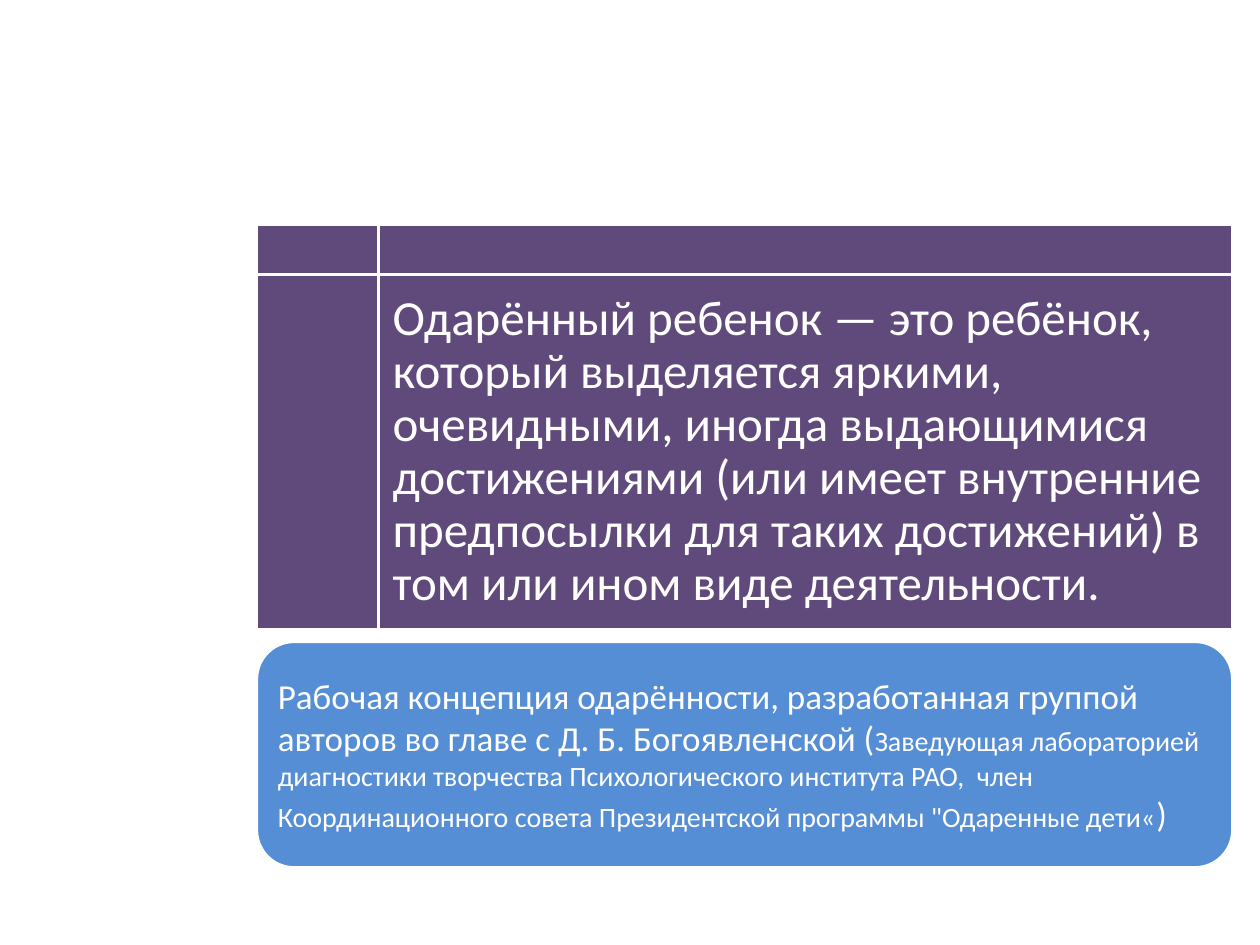
from pptx import Presentation
from pptx.dml.color import RGBColor as Color
from pptx.enum.shapes import MSO_SHAPE as Preset
from pptx.enum.text import MSO_ANCHOR as Anchor, PP_ALIGN as Align
from pptx.util import Pt

COLORS = {"definition": "604A7B", "concept": "558ED5", "white": "FFFFFF"}


class SlideBuilder:
    """Holds the text style and the current slide, and adds elements to it."""

    font_name = "Calibri"

    def __init__(self, slide):
        self.slide = slide

    def panel(self, preset, left, top, width, height, color):
        shape = self.slide.shapes.add_shape(
            preset, Pt(left), Pt(top), Pt(width), Pt(height))
        shape.shadow.inherit = False
        shape.fill.solid()
        shape.fill.fore_color.rgb = Color.from_string(COLORS[color])
        shape.line.color.rgb = Color.from_string(COLORS["white"])
        shape.line.width = Pt(2)

    def text(self, left, top, width, height, runs, inset, spacing=1.0):
        box = self.slide.shapes.add_textbox(
            Pt(left), Pt(top), Pt(width), Pt(height))
        frame = box.text_frame
        frame.word_wrap = True
        frame.vertical_anchor = Anchor.MIDDLE
        frame.margin_left = frame.margin_right = Pt(inset)
        frame.margin_top = frame.margin_bottom = Pt(inset)
        paragraph = frame.paragraphs[0]
        paragraph.alignment = Align.LEFT
        paragraph.line_spacing = spacing
        for content, size in runs:
            run = paragraph.add_run()
            run.text = content
            run.font.name = self.font_name
            run.font.size = Pt(size)
            run.font.color.rgb = Color.from_string(COLORS["white"])


def main():
    presentation = Presentation()
    presentation.slide_width, presentation.slide_height = Pt(720), Pt(540)
    blank_layout = presentation.slide_layouts[6]
    builder = SlideBuilder(presentation.slides.add_slide(blank_layout))

    left, width = 146.5, 558
    builder.panel(Preset.FLOWCHART_INTERNAL_STORAGE,
                  left, 128, width, 232, "definition")
    definition = [(
        "Одарённый ребенок — это ребёнок, который выделяется яркими, "
        "очевидными, иногда выдающимися достижениями (или имеет внутренние "
        "предпосылки для таких достижений) в том или ином виде деятельности.",
        28)]
    builder.text(216, 157, 488.5, 203, definition, inset=8.4, spacing=0.9)

    builder.panel(Preset.ROUNDED_RECTANGLE, left, 366.5, width, 129.5, "concept")
    concept = [
        ("Рабочая концепция одарённости, разработанная группой авторов "
         "во главе с Д. Б. Богоявленской (", 20),
        ("Заведующая лабораторией диагностики творчества Психологического "
         "института РАО,  член Координационного совета Президентской "
         "программы \"Одаренные дети«", 16),
        (")", 20)]
    builder.text(left + 6.3, 372.8, width - 12.6, 117, concept, inset=6)

    presentation.save("out.pptx")


if __name__ == "__main__":
    main()
